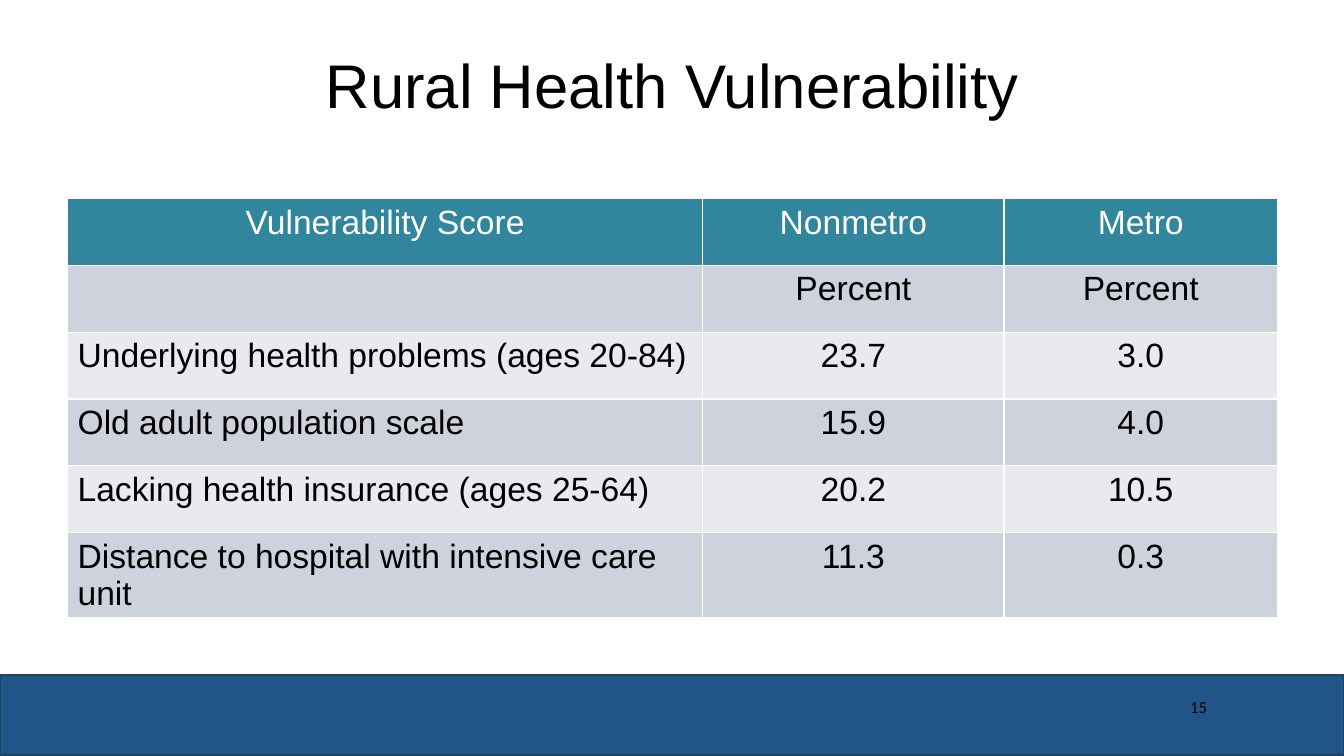
from dataclasses import dataclass

from lxml import etree
from pptx import Presentation, util as u
from pptx.dml.color import RGBColor
from pptx.enum import shapes, text
from pptx.oxml import ns

WIDTH, HEIGHT = 13.33, 7.5


@dataclass(frozen=True)
class Theme:
    heading_font: str = "Arial"
    number_font: str = "Calibri"
    ink: str = "000000"
    white: str = "FFFFFF"
    header: str = "31859C"
    bands: tuple[str, str] = ("CED2DC", "E8EAEE")
    bar: str = "20558A"
    bar_line: str = "20455A"
    title_size: int = 44
    table_size: int = 24
    number_size: int = 12


@dataclass(frozen=True)
class Box:
    """A rectangle given as shares of the slide's width and height."""
    left: float
    top: float
    width: float
    height: float

    def lengths(self) -> tuple[int, int, int, int]:
        return (u.Inches(self.left * WIDTH), u.Inches(self.top * HEIGHT),
                u.Inches(self.width * WIDTH), u.Inches(self.height * HEIGHT))


@dataclass(frozen=True)
class Score:
    label: str
    nonmetro: str
    metro: str

    def texts(self) -> tuple[str, str, str]:
        return self.label, self.nonmetro, self.metro


THEME = Theme()
BAR = Box(0, 6.7 / HEIGHT, 1, 0.79 / HEIGHT)
TITLE = Box(1.27 / WIDTH, 0.29 / HEIGHT, 10.8 / WIDTH, 1.17 / HEIGHT)
TABLE = Box(0.67 / WIDTH, 1.97 / HEIGHT, 12 / WIDTH, 3.98 / HEIGHT)
NUMBER = Box(10.2 / WIDTH, 6.81 / HEIGHT, 1.87 / WIDTH, 0.4 / HEIGHT)
COLUMN_SHARES = (0.525, 0.249, 0.226)
SCORES = (
    Score("Vulnerability Score", "Nonmetro", "Metro"),
    Score("", "Percent", "Percent"),
    Score("Underlying health problems (ages 20-84)", "23.7", "3.0"),
    Score("Old adult population scale", "15.9", "4.0"),
    Score("Lacking health insurance (ages 25-64)", "20.2", "10.5"),
    Score("Distance to hospital with intensive care unit", "11.3", "0.3"),
)


def color(value: str) -> RGBColor:
    return RGBColor.from_string(value)


def style(paragraph, font: str, size: int, ink: str, alignment) -> None:
    paragraph.alignment = alignment
    paragraph.font.name = font
    paragraph.font.size = u.Pt(size)
    paragraph.font.bold = False
    paragraph.font.color.rgb = color(ink)


def add_borders(cell) -> None:
    properties = cell._tc.get_or_add_tcPr()
    for position, side in enumerate(("lnL", "lnR", "lnT", "lnB")):
        line = etree.Element(ns.qn(f"a:{side}"), w=str(u.Pt(1)))
        fill = etree.SubElement(line, ns.qn("a:solidFill"))
        etree.SubElement(fill, ns.qn("a:srgbClr"), val=THEME.white)
        properties.insert(position, line)


def add_bar(slide) -> None:
    bar = slide.shapes.add_shape(shapes.MSO_SHAPE.RECTANGLE, *BAR.lengths())
    bar.shadow.inherit = False
    bar.fill.solid()
    bar.fill.fore_color.rgb = color(THEME.bar)
    bar.line.color.rgb = color(THEME.bar_line)
    bar.line.width = u.Pt(1.5)


def set_title(slide, words: str) -> None:
    title = slide.shapes.title
    title.left, title.top, title.width, title.height = TITLE.lengths()
    frame = title.text_frame
    frame.text = words
    frame.vertical_anchor = text.MSO_ANCHOR.MIDDLE
    paragraph = frame.paragraphs[0]
    paragraph.line_spacing = 0.9
    style(paragraph, THEME.heading_font, THEME.title_size, THEME.ink, text.PP_ALIGN.CENTER)


def add_score_table(slide) -> None:
    table = slide.shapes.add_table(len(SCORES), len(COLUMN_SHARES), *TABLE.lengths()).table
    for column, share in zip(table.columns, COLUMN_SHARES):
        column.width = u.Inches(share * TABLE.width * WIDTH)
    for row, score in enumerate(SCORES):
        is_header = row == 0
        fill = THEME.header if is_header else THEME.bands[(row - 1) % 2]
        ink = THEME.white if is_header else THEME.ink
        for column, words in enumerate(score.texts()):
            cell = table.cell(row, column)
            cell.text = words
            cell.fill.solid()
            cell.fill.fore_color.rgb = color(fill)
            add_borders(cell)
            centred = is_header or column > 0
            alignment = text.PP_ALIGN.CENTER if centred else text.PP_ALIGN.LEFT
            style(cell.text_frame.paragraphs[0], THEME.heading_font, THEME.table_size,
                  ink, alignment)


def add_slide_number(slide, number: int) -> None:
    frame = slide.shapes.add_textbox(*NUMBER.lengths()).text_frame
    frame.word_wrap = True
    frame.vertical_anchor = text.MSO_ANCHOR.MIDDLE
    frame.text = str(number)
    style(frame.paragraphs[0], THEME.number_font, THEME.number_size, THEME.ink,
          text.PP_ALIGN.RIGHT)


def main() -> None:
    presentation = Presentation()
    presentation.slide_width = u.Inches(WIDTH)
    presentation.slide_height = u.Inches(HEIGHT)
    slide = presentation.slides.add_slide(presentation.slide_layouts.get_by_name("Title Only"))
    add_bar(slide)
    set_title(slide, "Rural Health Vulnerability")
    add_score_table(slide)
    add_slide_number(slide, 15)
    presentation.save("out.pptx")


if __name__ == "__main__":
    main()
